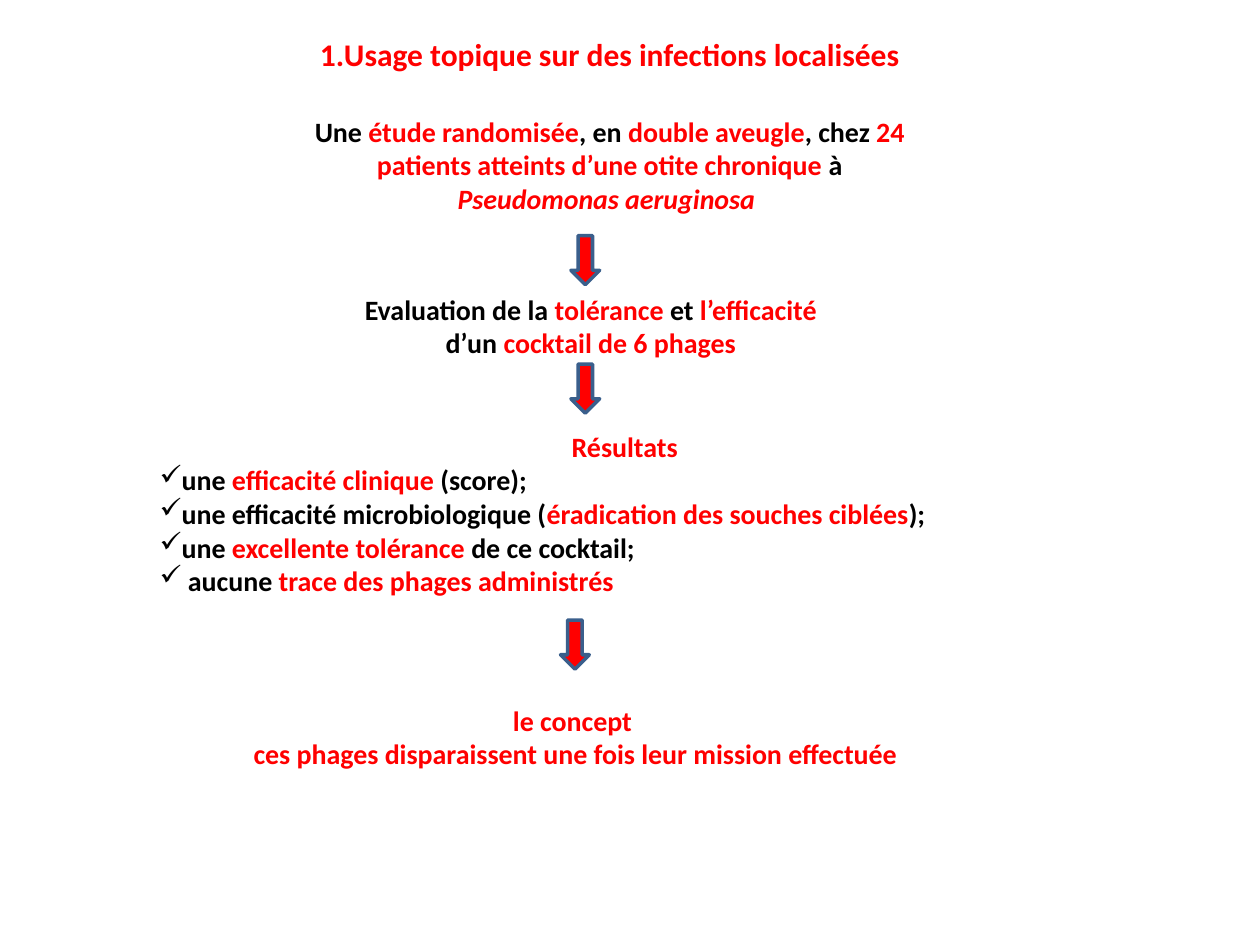
import pptx
import pptx.dml.color
import pptx.enum.shapes
import pptx.enum.text
import pptx.oxml
import pptx.oxml.ns
import pptx.util
from pptx.util import Cm

COLORS = {"text": "000000", "accent": "FF0000", "outline": "3A5F8C"}
CENTER = pptx.enum.text.PP_ALIGN.CENTER
LEFT = pptx.enum.text.PP_ALIGN.LEFT


def rgb(name):
    return pptx.dml.color.RGBColor.from_string(COLORS[name])


def write(paragraph, text, size=16, color="text", bold=True, italic=False, font="Calibri"):
    """Append text to the paragraph; parts between asterisks take the accent colour."""
    for index, part in enumerate(text.split("*")):
        if part:
            run = paragraph.add_run()
            run.text = part
            run.font.name = font
            run.font.size = pptx.util.Pt(size)
            run.font.bold = bold
            run.font.italic = italic
            run.font.color.rgb = rgb("accent" if index % 2 else color)


def add_check_bullet(paragraph):
    properties = paragraph._p.get_or_add_pPr()
    properties.set("marL", "0")
    properties.set("indent", "0")
    properties.append(pptx.oxml.parse_xml(
        f'<a:buChar {pptx.oxml.ns.nsdecls("a")} char="✓"/>'))


class SlideBuilder:
    def __init__(self, presentation):
        self.slide = presentation.slides.add_slide(presentation.slide_layouts[5])

    def title(self, text, left, top, width, height):
        title = self.slide.shapes.title
        title.left, title.top = Cm(left), Cm(top)
        title.width, title.height = Cm(width), Cm(height)
        frame = title.text_frame
        frame.word_wrap = False
        frame.auto_size = pptx.enum.text.MSO_AUTO_SIZE.NONE
        frame.paragraphs[0].alignment = CENTER
        write(frame.paragraphs[0], text, size=18, color="accent")

    def text_box(self, lines, left, top, width, height, bullets=()):
        """Add centred lines, then left-aligned check-marked ones; return the last paragraph."""
        box = self.slide.shapes.add_textbox(Cm(left), Cm(top), Cm(width), Cm(height))
        frame = box.text_frame
        frame.word_wrap = True
        for index, text in enumerate([*lines, *bullets]):
            paragraph = frame.add_paragraph() if index else frame.paragraphs[0]
            if index < len(lines):
                paragraph.alignment = CENTER
            else:
                paragraph.alignment = LEFT
                add_check_bullet(paragraph)
            write(paragraph, text)
        return paragraph

    def down_arrow(self, left, top):
        arrow = self.slide.shapes.add_shape(
            pptx.enum.shapes.MSO_SHAPE.DOWN_ARROW, Cm(left), Cm(top), Cm(0.58), Cm(0.99))
        arrow.shadow.inherit = False
        arrow.fill.solid()
        arrow.fill.fore_color.rgb = rgb("accent")
        arrow.line.color.rgb = rgb("outline")
        arrow.line.width = pptx.util.Pt(2)


def main():
    presentation = pptx.Presentation()
    presentation.slide_width, presentation.slide_height = Cm(25.4), Cm(19.05)
    builder = SlideBuilder(presentation)

    builder.title("1.Usage topique sur des infections localisées", 6.15, 0.58, 12.29, 1.02)
    study = builder.text_box(
        ["Une *étude randomisée*, en *double aveugle*, chez "
         "*24 patients atteints d’une otite chronique* à "],
        5.94, 2.18, 12.7, 2.31)
    write(study, "Pseudomonas aeruginosa ", color="accent", italic=True)
    builder.text_box(
        ["Evaluation de la *tolérance* et *l’efficacité*", "d’un *cocktail de 6 phages*"],
        6.55, 5.77, 10.72, 1.63)
    builder.text_box(
        ["*Résultats*"], 2.97, 8.53, 19.25, 4.37,
        bullets=["une *efficacité clinique *(score);",
                 "une efficacité microbiologique (*éradication des souches ciblées*);",
                 "une *excellente tolérance *de ce cocktail;",
                 " aucune *trace des phages administrés*"])
    builder.text_box(
        ["*le concept *", "*ces phages disparaissent une fois leur mission effectuée*"],
        3.96, 14.05, 15.29, 1.63)
    for left, top in [(11.51, 4.75), (11.51, 7.34), (11.3, 12.5)]:
        builder.down_arrow(left, top)

    presentation.save("out.pptx")


if __name__ == "__main__":
    main()
